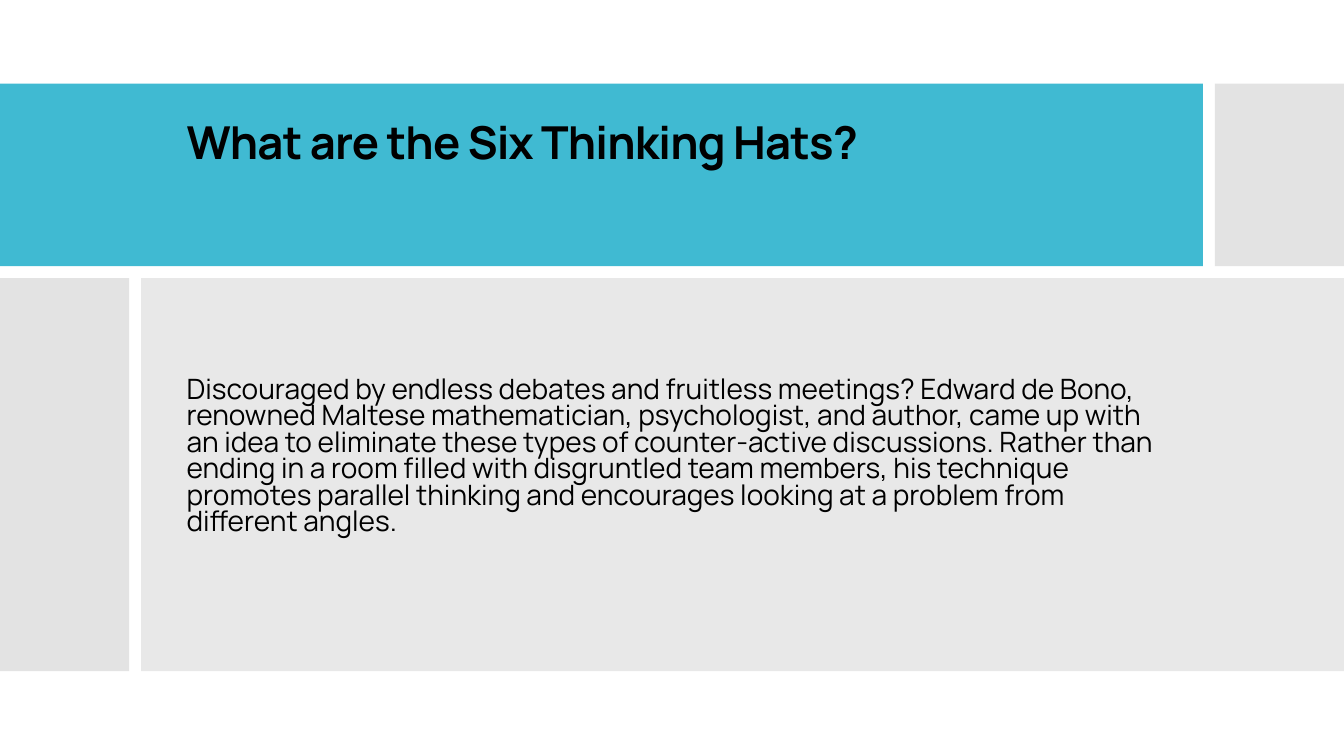
"""Build the slide that introduces the Six Thinking Hats."""
from lxml import etree
from pptx import Presentation
from pptx.dml.color import RGBColor
from pptx.enum import shapes, text
from pptx.oxml import ns
from pptx.util import Inches, Pt

COLOURS = {"band": "40BAD2", "block": "C8C8C8", "panel": "D9D9D9", "ink": "000000", "page": "FFFFFF"}

deck = Presentation()
deck.slide_width, deck.slide_height = Inches(13.33), Inches(7.5)
page = deck.slides.add_slide(deck.slide_layouts[1])
page.background.fill.solid()
page.background.fill.fore_color.rgb = RGBColor.from_string(COLOURS["page"])

panels = [
    ("band", 100, 0, 0.83, 11.93, 1.81),
    ("block", 50, 12.05, 0.83, 1.28, 1.81),
    ("block", 50, 0, 2.76, 1.28, 3.9),
    ("panel", 60, 1.4, 2.76, 11.93, 3.9),
]
for colour, opacity, *frame in panels:
    panel = page.shapes.add_shape(shapes.MSO_SHAPE.RECTANGLE, *map(Inches, frame))
    panel.shadow.inherit = False
    panel.line.fill.background()
    panel.fill.solid()
    panel.fill.fore_color.rgb = RGBColor.from_string(COLOURS[colour])
    if opacity < 100:
        tint = panel.fill._xPr.find(".//" + ns.qn("a:srgbClr"))
        etree.SubElement(tint, ns.qn("a:alpha"), val=str(opacity * 1000))

title, body = page.placeholders
texts = [
    (title, "What are the Six Thinking Hats?", (1.75, 1.19, 9.82, 1.09), 0.9,
     {"size": Pt(32.4), "bold": True}, {"spc": "-60"},
     {"vertical_anchor": text.MSO_ANCHOR.TOP, "margin_top": 0}),
    (body, "Discouraged by endless debates and fruitless meetings? Edward de Bono, renowned Maltese "
     "mathematician, psychologist, and author, came up with an idea to eliminate these types of "
     "counter-active discussions. Rather than ending in a room filled with disgruntled team members, "
     "his technique promotes parallel thinking and encourages looking at a problem from different angles.",
     (1.75, 2.77, 9.82, 3.89), 0.79, {"size": Pt(20), "bold": False}, {},
     {"vertical_anchor": text.MSO_ANCHOR.MIDDLE, "margin_bottom": Inches(0.4)}),
]
for box, words, frame, spacing, font, tracking, layout in texts:
    box.element.getparent().append(box.element)
    box.left, box.top, box.width, box.height = map(Inches, frame)
    box.text_frame.text = words
    for name, value in {"word_wrap": True, "auto_size": text.MSO_AUTO_SIZE.NONE, **layout}.items():
        setattr(box.text_frame, name, value)
    para = box.text_frame.paragraphs[0]
    settings = para._p.get_or_add_pPr()
    settings.set("marL", "0")
    settings.set("indent", "0")
    etree.SubElement(settings, ns.qn("a:buNone"))
    for name, value in {"alignment": text.PP_ALIGN.LEFT, "line_spacing": spacing, "space_before": Pt(0)}.items():
        setattr(para, name, value)
    span = para.runs[0]
    for name, value in {"name": "Manrope", **font}.items():
        setattr(span.font, name, value)
    span.font.color.rgb = RGBColor.from_string(COLOURS["ink"])
    for name, value in tracking.items():
        span.font._element.set(name, value)

deck.save("out.pptx")
